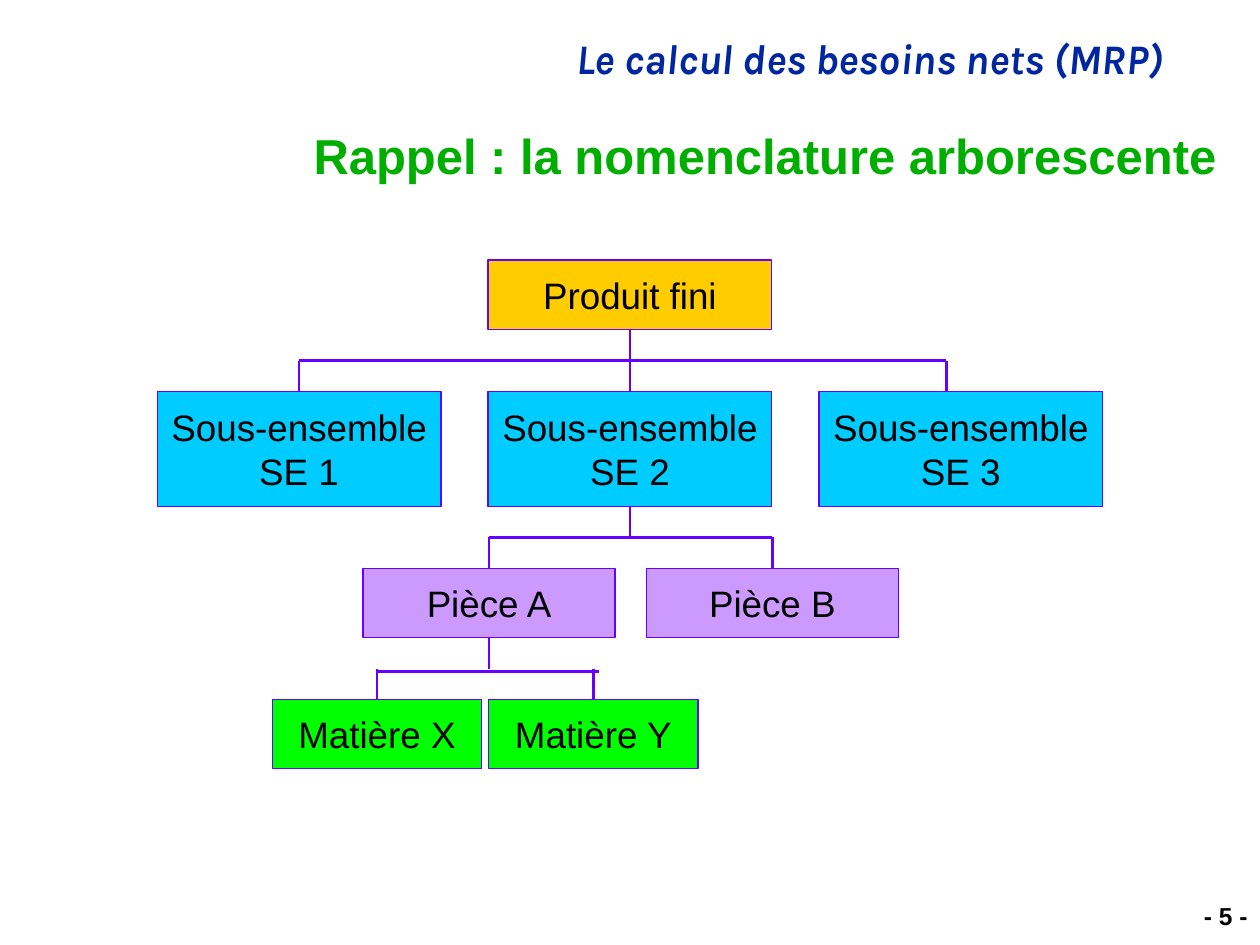
from lxml.etree import SubElement
from pptx import Presentation
from pptx.dml.color import RGBColor
from pptx.enum.shapes import MSO_CONNECTOR as Connector, MSO_SHAPE as Shape
from pptx.enum.text import MSO_ANCHOR as Anchor, MSO_AUTO_SIZE as AutoSize, PP_ALIGN as Align
from pptx.oxml.ns import qn
from pptx.util import Cm, Pt

VIOLET = "6600FF"
BOTTOM, TOP = 2, 0


def write(frame, text, size=21, font="Arial", color="000000", bold=False, italic=False,
          align=Align.CENTER, anchor=Anchor.MIDDLE, spacing=1.0):
    frame.word_wrap = True
    frame.auto_size = AutoSize.NONE
    frame.vertical_anchor = anchor
    frame.margin_left = frame.margin_right = Cm(0.25)
    frame.margin_top = frame.margin_bottom = Cm(0.13)
    frame.text = text
    for paragraph in frame.paragraphs:
        paragraph.alignment = align
        paragraph.line_spacing = spacing
        for run in paragraph.runs:
            run.font.size, run.font.name = Pt(size), font
            run.font.bold, run.font.italic = bold, italic
            run.font.color.rgb = RGBColor.from_string(color)


def add_line(x1, y1, x2, y2):
    line = slide.shapes.add_connector(Connector.STRAIGHT, Cm(x1), Cm(y1), Cm(x2), Cm(y2))
    line.line.color.rgb = RGBColor.from_string(VIOLET)
    line.line.width = Pt(1.5)
    SubElement(line._element.spPr, qn("a:effectLst"))
    return line


presentation = Presentation()
presentation.slide_width, presentation.slide_height = Cm(25.4), Cm(19.05)
slide = presentation.slides.add_slide(presentation.slide_layouts[5])

# Course header and page number
header = slide.shapes.add_textbox(Cm(3.18), Cm(0.64), Cm(20.52), Cm(1.17))
write(header.text_frame, "Le calcul des besoins nets (MRP)", size=24, font="Karla", color="00279F",
      bold=True, italic=True, align=Align.RIGHT, anchor=Anchor.TOP, spacing=0.9)
page_number = slide.shapes.add_textbox(Cm(22.07), Cm(18.11), Cm(3.33), Cm(0.79))
write(page_number.text_frame, "- 5 -", size=14, bold=True, align=Align.RIGHT,
      anchor=Anchor.TOP, spacing=0.9)

# Title
title = slide.shapes.title
title.left, title.top, title.width, title.height = Cm(3.18), Cm(2.34), Cm(21.59), Cm(1.7)
write(title.text_frame, "Rappel : la nomenclature arborescente", size=28, color="00AE00",
      bold=True, align=Align.RIGHT, spacing=0.9)

# Boxes, level by level: top, width, height, fill, {text: centre}
levels = [
    (5.24, 5.72, 1.4, "FFCC00", {"Produit fini": 12.7}),
    (7.9, 5.72, 2.31, "00CCFF", {"Sous-ensemble\nSE 1": 6.03, "Sous-ensemble\nSE 2": 12.7,
                                 "Sous-ensemble\nSE 3": 19.37}),
    (11.46, 5.08, 1.4, "CC99FF", {"Pièce A": 9.86, "Pièce B": 15.57}),
    (14.1, 4.22, 1.4, "00FF00", {"Matière X": 7.6, "Matière Y": 11.96}),
]
boxes = {}
for top, width, height, fill, centres in levels:
    for text, centre in centres.items():
        box = slide.shapes.add_shape(Shape.RECTANGLE, Cm(centre - width / 2), Cm(top),
                                     Cm(width), Cm(height))
        box.shadow.inherit = False
        box.fill.solid()
        box.fill.fore_color.rgb = RGBColor.from_string(fill)
        box.line.color.rgb = RGBColor.from_string(VIOLET)
        box.line.width = Pt(0.75)
        write(box.text_frame, text)
        boxes[text] = box

# Branches: parent, level of children, stem end, bar height, left and right bar halves
branches = [
    ("Produit fini", 1, 7.27, 7.27, [(6.03, 12.7), (12.7, 19.08)]),
    ("Sous-ensemble\nSE 2", 2, 10.83, 10.83, [(9.86, 12.7), (12.7, 15.57)]),
    ("Pièce A", 3, 13.48, 13.54, [(7.62, 9.96), (9.73, 12.07)]),
]
for parent, level, stem_end, bar, halves in branches:
    box = boxes[parent]
    middle = (box.left + box.width / 2) / Cm(1)
    stem = add_line(middle, stem_end - 0.6, middle, stem_end)
    stem.begin_connect(box, BOTTOM)
    for start, end in halves:
        add_line(start, bar, end, bar)
    top, centres = levels[level][0], levels[level][4]
    for child, centre in centres.items():
        # The last drop of the first branch lands left of its box's middle
        off_centre = child.endswith("SE 3")
        x = 19.08 if off_centre else centre
        drop = add_line(x, stem_end, x, top)
        if not off_centre:
            drop.end_connect(boxes[child], TOP)

presentation.save("out.pptx")
